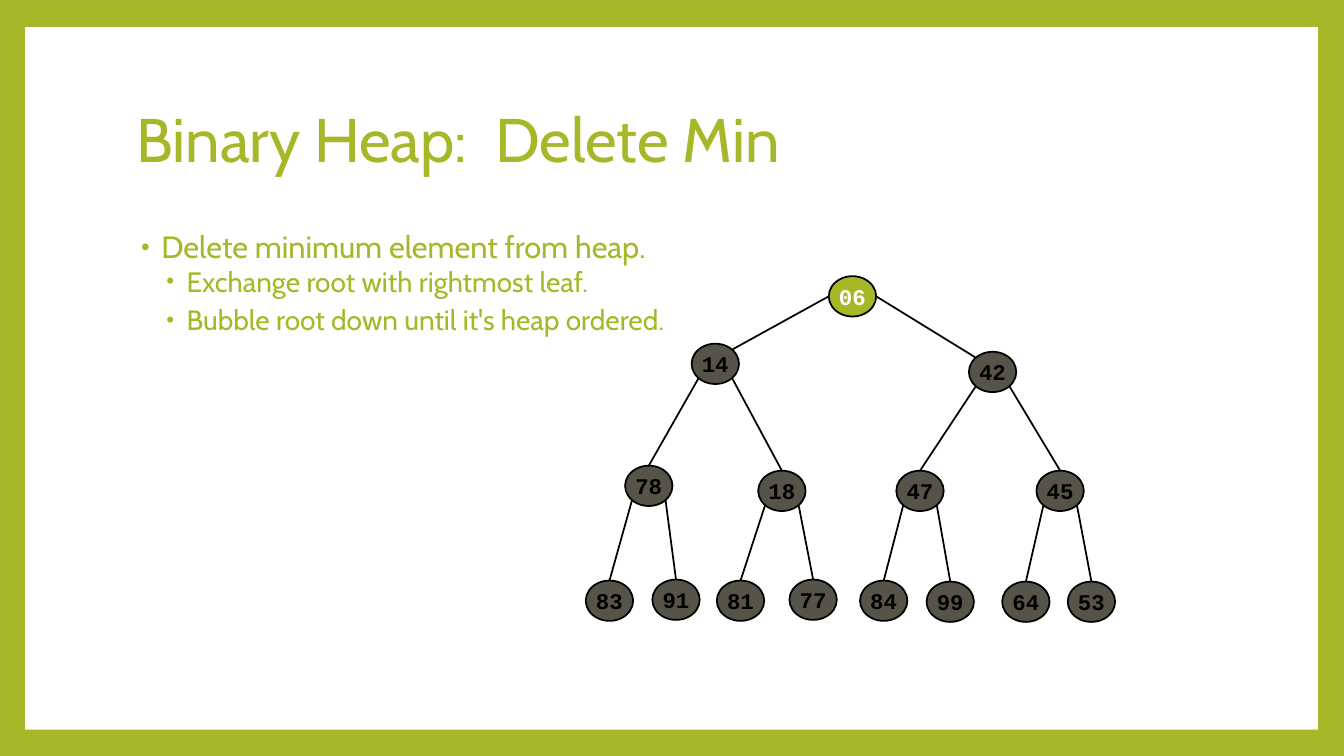
import lxml.etree
import pptx
import pptx.dml.color
import pptx.enum.shapes
import pptx.enum.text
import pptx.oxml.ns
import pptx.util

Inches, Pt = pptx.util.Inches, pptx.util.Pt
RGBColor = pptx.dml.color.RGBColor
GREEN = RGBColor(0xA6, 0xB7, 0x27)
GRAY = RGBColor(0x56, 0x53, 0x49)
WHITE = RGBColor(0xFF, 0xFF, 0xFF)
BLACK = RGBColor(0, 0, 0)

TITLE = "Binary Heap:  Delete Min"
BULLETS = [
    (0, "Delete minimum element from heap."),
    (1, "Exchange root with rightmost leaf."),
    (1, "Bubble root down until it's heap ordered."),
]
LEVELS = [
    {"size": 22, "indent": 0.25, "before": 14, "after": 0},
    {"size": 20, "indent": 0.5, "before": 2, "after": 4},
]
HEAP = [
    ("06", 8.22, 2.74),
    ("14", 6.86, 3.41), ("42", 9.61, 3.49),
    ("78", 6.2, 4.62), ("18", 7.52, 4.67), ("47", 8.89, 4.67), ("45", 10.28, 4.67),
    ("83", 5.81, 5.76), ("91", 6.47, 5.75), ("81", 7.11, 5.76), ("77", 7.83, 5.75),
    ("84", 8.53, 5.76), ("99", 9.19, 5.77), ("64", 9.94, 5.77), ("53", 10.59, 5.77),
]
NODE_WIDTH, NODE_HEIGHT = 0.47, 0.4
DIAGONAL = 0.5 ** 0.5


def set_all(target, values):
    for name, value in values.items():
        setattr(target, name, value)


def font_format(name, size, color, bold=False):
    return {"name": name, "size": Pt(size), "bold": bold}, color


def format_font(font, values, color):
    set_all(font, values)
    font.color.rgb = color


def place(shape, left, top, width, height):
    set_all(shape, {"left": Inches(left), "top": Inches(top),
                    "width": Inches(width), "height": Inches(height)})


def add_child(parent, tag, **attributes):
    child = lxml.etree.SubElement(parent, pptx.oxml.ns.qn(tag))
    for name, value in attributes.items():
        child.set(name, value)
    return child


def add_title(slide):
    title = slide.shapes.title
    place(title, 1.25, 0.67, 10.8, 1.48)
    set_all(title.text_frame, {
        "text": TITLE, "vertical_anchor": pptx.enum.text.MSO_ANCHOR.MIDDLE,
        "auto_size": pptx.enum.text.MSO_AUTO_SIZE.NONE})
    paragraph = title.text_frame.paragraphs[0]
    set_all(paragraph, {"alignment": pptx.enum.text.PP_ALIGN.LEFT, "line_spacing": 0.9})
    format_font(paragraph.runs[0].font, *font_format("Cabin", 44, GREEN))


def add_bullets(slide):
    body = slide.placeholders[1]
    place(body, 1.25, 2.25, 10.8, 4.42)
    frame = body.text_frame
    frame.text = "\n".join(text for level, text in BULLETS)
    frame.auto_size = pptx.enum.text.MSO_AUTO_SIZE.NONE
    for paragraph, (level, text) in zip(frame.paragraphs, BULLETS):
        style = LEVELS[level]
        set_all(paragraph, {"level": level, "line_spacing": 0.9,
                            "space_before": Pt(style["before"]),
                            "space_after": Pt(style["after"])})
        format_font(paragraph.runs[0].font, *font_format("Cabin", style["size"], GREEN))
        properties = paragraph._p.get_or_add_pPr()
        properties.set("marL", str(Inches(style["indent"])))
        properties.set("indent", str(Inches(-0.2)))
        add_child(add_child(properties, "a:buClr"), "a:srgbClr", val=str(GREEN))
        add_child(properties, "a:buSzPct", val="80000")
        add_child(properties, "a:buFont", typeface="Arial")
        add_child(properties, "a:buChar", char="•")


def add_node(slide, label, left, top, fill, color):
    node = slide.shapes.add_shape(
        pptx.enum.shapes.MSO_SHAPE.OVAL, Inches(left), Inches(top),
        Inches(NODE_WIDTH), Inches(NODE_HEIGHT))
    node.shadow.inherit = False
    node.fill.solid()
    node.fill.fore_color.rgb = fill
    node.line.color.rgb = BLACK
    node.line.width = Pt(1.25)
    set_all(node.text_frame, {
        "text": label, "word_wrap": False,
        "vertical_anchor": pptx.enum.text.MSO_ANCHOR.MIDDLE})
    paragraph = node.text_frame.paragraphs[0]
    paragraph.alignment = pptx.enum.text.PP_ALIGN.CENTER
    format_font(paragraph.runs[0].font, *font_format("Courier New", 16, color, True))
    return node


def rim_point(index, across, down):
    label, left, top = HEAP[index]
    return (Inches(left + NODE_WIDTH / 2 * (1 + across)),
            Inches(top + NODE_HEIGHT / 2 * (1 + down)))


def add_edge(slide, nodes, child):
    parent = (child - 1) // 2
    side = -1 if child % 2 else 1
    if parent == 0:
        start = rim_point(parent, side, 0)
        end = rim_point(child, -side * DIAGONAL, -DIAGONAL)
    else:
        start = rim_point(parent, side * DIAGONAL, DIAGONAL)
        end = rim_point(child, 0, -1)
    edge = slide.shapes.add_connector(
        pptx.enum.shapes.MSO_CONNECTOR.STRAIGHT, *start, *end)
    if parent:
        edge.end_connect(nodes[child], 0)
    edge.line.color.rgb = BLACK
    edge.line.width = Pt(1.25)
    add_child(edge._element.spPr, "a:effectLst")


def main():
    """Build the binary heap slide about deleting the minimum."""
    presentation = pptx.Presentation()
    set_all(presentation, {"slide_width": Inches(13.33), "slide_height": Inches(7.5)})
    slide = presentation.slides.add_slide(presentation.slide_layouts[1])
    slide.background.fill.solid()
    slide.background.fill.fore_color.rgb = GREEN

    panel = slide.shapes.add_shape(
        pptx.enum.shapes.MSO_SHAPE.RECTANGLE,
        Inches(0.25), Inches(0.27), Inches(12.82), Inches(6.97))
    panel.shadow.inherit = False
    panel.fill.solid()
    panel.fill.fore_color.rgb = WHITE
    panel.line.fill.background()
    slide.shapes._spTree.insert(2, panel._element)

    add_title(slide)
    add_bullets(slide)
    nodes = []
    for index, (label, left, top) in enumerate(HEAP):
        fill, color = (GRAY, BLACK) if index else (GREEN, WHITE)
        nodes.append(add_node(slide, label, left, top, fill, color))
    for child in range(1, len(HEAP)):
        add_edge(slide, nodes, child)
    presentation.save("out.pptx")


if __name__ == "__main__":
    main()
